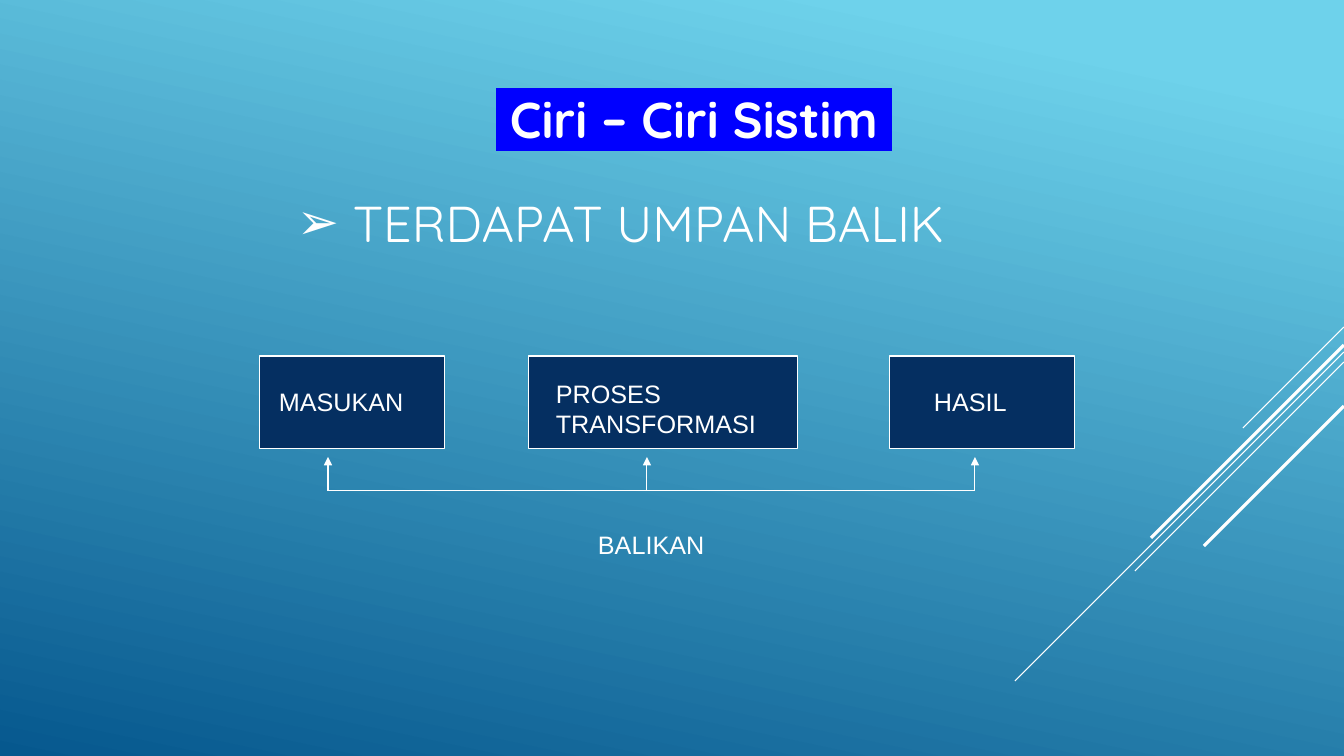
from dataclasses import dataclass

from lxml import etree
from pptx import Presentation
from pptx import util as u
from pptx.dml.color import RGBColor
from pptx.enum import shapes, text
from pptx.oxml import ns


@dataclass(frozen=True)
class Theme:
    sky = RGBColor.from_string("6ED2EB")
    ocean = RGBColor.from_string("06588E")
    navy = RGBColor.from_string("052F61")
    white = RGBColor.from_string("FFFFFF")
    highlight = "0000FF"
    heading_font = "Quicksand"
    label_font = "Arial"
    heading_size = u.Pt(36)
    label_size = u.Pt(18)
    thin = u.Pt(0.75)
    thick = u.Pt(2.25)


theme = Theme()
PX = u.Inches(1) / 100.8
SLIDE_WIDTH, SLIDE_HEIGHT = 1344, 756

deck = Presentation()
deck.slide_width = round(SLIDE_WIDTH * PX)
deck.slide_height = round(SLIDE_HEIGHT * PX)
page = deck.slides.add_slide(deck.slide_layouts[6])


def add_line(x1, y1, x2, y2, width=theme.thin, arrow=False):
    ends = [round(value * PX) for value in (x1, y1, x2, y2)]
    line = page.shapes.add_connector(shapes.MSO_CONNECTOR.STRAIGHT, *ends)
    line.line.color.rgb = theme.white
    line.line.width = width
    if arrow:
        outline = line.line._get_or_add_ln()
        etree.SubElement(outline, ns.qn("a:tailEnd"), type="triangle")
    etree.SubElement(line._element.spPr, ns.qn("a:effectLst"))


def add_text(wording, left, top, width, height, font=theme.label_font, size=theme.label_size):
    """Add a wrapped one-run text box and return its frame, paragraph and run."""
    box = page.shapes.add_textbox(*[round(value * PX) for value in (left, top, width, height)])
    frame = box.text_frame
    frame.word_wrap = True
    para = frame.paragraphs[0]
    span = para.add_run()
    span.text = wording
    span.font.name = font
    span.font.size = size
    span.font.color.rgb = theme.white
    return frame, para, span


# Background gradient
backdrop = page.background.fill
backdrop.gradient()
backdrop.gradient_angle = 360 - 102
for stop, (position, color) in zip(backdrop.gradient_stops, [(0.1, theme.sky), (1, theme.ocean)]):
    stop.position = position
    stop.color.rgb = color

# Diagonal rays from the right edge, all at 45 degrees
for start, reach, width in [
    (327, 101, theme.thin),
    (352, 329, theme.thin),
    (362, 209, theme.thin),
    (345, 193, theme.thick),
    (406, 140, theme.thick),
]:
    add_line(SLIDE_WIDTH, start, SLIDE_WIDTH - reach, start + reach, width)

# Bulleted title
frame, para, span = add_text(
    " TERDAPAT UMPAN BALIK", 287, 149, 1159, 146, theme.heading_font, theme.heading_size
)
frame.vertical_anchor = text.MSO_ANCHOR.MIDDLE
bullet = para._p.get_or_add_pPr()
bullet.set("marL", "0")
bullet.set("indent", "0")
etree.SubElement(bullet, ns.qn("a:buFont"), typeface=theme.label_font)
etree.SubElement(bullet, ns.qn("a:buChar"), char="➢")

# Process stages with a feedback arrow below each
STAGE_TOP, STAGE_HEIGHT = 356, 93
ARROW_TIP, FEEDBACK_Y = 457, 491
stages = [
    # wording, box left, box width, label left, top, width, height, arrow x
    ("MASUKAN", 260, 185, 269, 381, 151, 40, 328),
    ("PROSES TRANSFORMASI", 529, 269, 546, 373, 227, 71, 647),
    ("HASIL", 890, 185, 924, 381, 126, 40, 975),
]
for wording, left, width, *label_place, arrow_x in stages:
    stage = page.shapes.add_shape(
        shapes.MSO_SHAPE.RECTANGLE,
        *[round(value * PX) for value in (left, STAGE_TOP, width, STAGE_HEIGHT)],
    )
    stage.shadow.inherit = False
    stage.fill.solid()
    stage.fill.fore_color.rgb = theme.navy
    stage.line.color.rgb = theme.white
    stage.line.width = theme.thin
    add_text(wording, *label_place)
    add_line(arrow_x, FEEDBACK_Y, arrow_x, ARROW_TIP, arrow=True)

add_line(stages[0][-1], FEEDBACK_Y, stages[-1][-1], FEEDBACK_Y)
add_text("BALIKAN", 588, 524, 134, 40)

# Highlighted heading
frame, para, span = add_text(
    " Ciri – Ciri Sistim ", 287, 83, 814, 72, theme.heading_font, theme.heading_size
)
para.alignment = text.PP_ALIGN.CENTER
span.font.bold = True
marker = etree.Element(ns.qn("a:highlight"))
etree.SubElement(marker, ns.qn("a:srgbClr"), val=theme.highlight)
span.font._element.find(ns.qn("a:solidFill")).addnext(marker) if hasattr(
    span.font, "_element"
) else span._r.rPr.find(ns.qn("a:solidFill")).addnext(marker)

deck.save("out.pptx")
